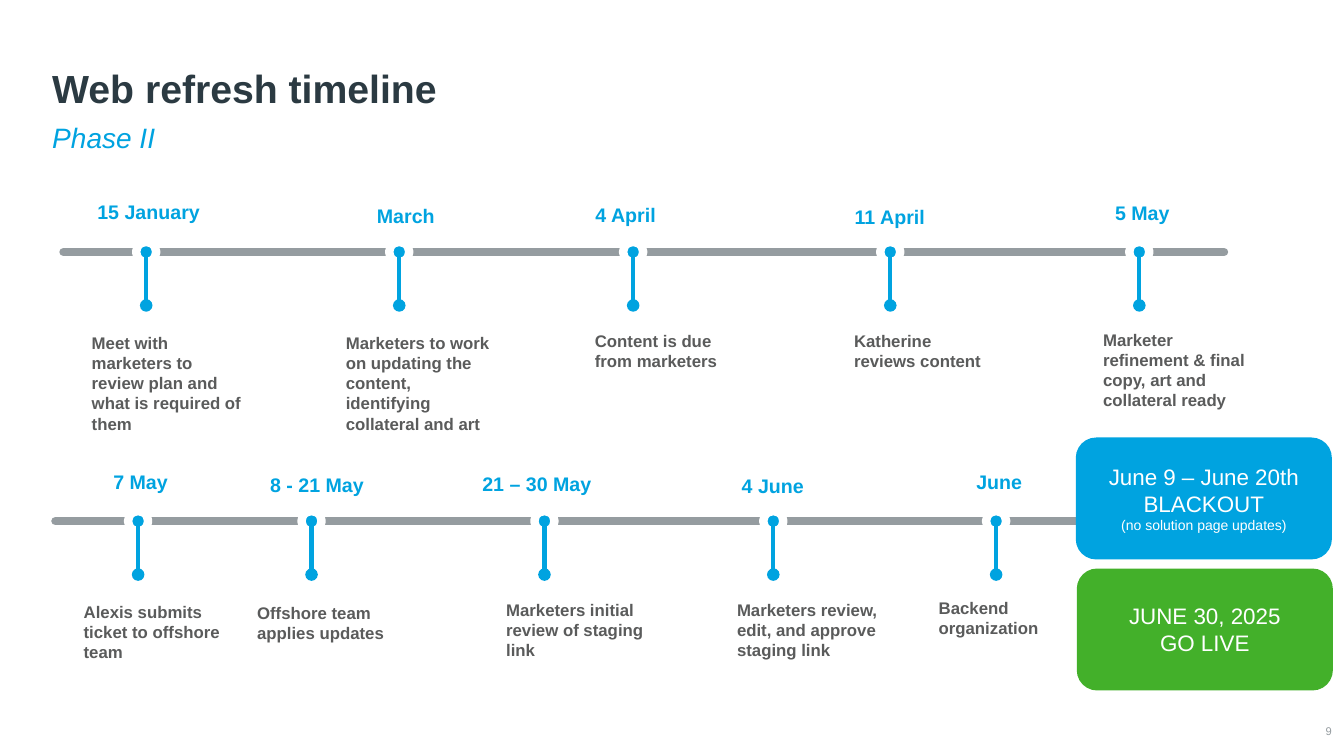
from lxml import etree
from pptx import Presentation
from pptx.dml.color import RGBColor
from pptx.enum.shapes import MSO_CONNECTOR, MSO_SHAPE
from pptx.enum.text import MSO_ANCHOR, PP_ALIGN
from pptx.oxml.ns import qn
from pptx.util import Inches, Pt

STRAIGHT = MSO_CONNECTOR.STRAIGHT
OVAL, ROUNDED = MSO_SHAPE.OVAL, MSO_SHAPE.ROUNDED_RECTANGLE
TOP, MIDDLE, BOTTOM = MSO_ANCHOR.TOP, MSO_ANCHOR.MIDDLE, MSO_ANCHOR.BOTTOM
LEFT, CENTER, RIGHT = PP_ALIGN.LEFT, PP_ALIGN.CENTER, PP_ALIGN.RIGHT

COLORS = {
    "blue": "00A3E0",
    "green": "43B02A",
    "navy": "2B3A42",
    "gray": "959CA0",
    "text": "5A5B5B",
    "white": "FFFFFF",
}
FONT = "Arial"
TITLE = "Web refresh timeline"
SUBTITLE = "Phase II"
PAGE_NUMBER = "9"

# Each milestone: date, (left, top, width), stem x, note, (left, top, width)
TIMELINES = [
    {
        "y": 2.5, "start": 0.63, "end": 12.14,
        "milestones": [
            ("15 January", (0.61, 1.93, 1.73), 1.45,
             "Meet with marketers to review plan and what is required of them", (0.91, 3.3, 1.52)),
            ("March", (2.79, 1.97, 2.47), 3.96,
             "Marketers to work on updating the content, identifying collateral and art", (3.43, 3.3, 1.52)),
            ("4 April", (5.26, 1.96, 1.89), 6.28,
             "Content is due from marketers", (5.9, 3.28, 1.51)),
            ("11 April", (7.88, 1.98, 1.89), 8.83,
             "Katherine reviews content", (8.47, 3.28, 1.42)),
            ("5 May", (10.04, 1.94, 2.58), 11.3,
             "Marketer refinement & final copy, art and collateral ready", (10.94, 3.27, 1.48)),
        ],
    },
    {
        "y": 5.17, "start": 0.55, "end": 12.05,
        "milestones": [
            ("7 May", (0.53, 4.61, 1.73), 1.37,
             "Alexis submits ticket to offshore team", (0.83, 5.97, 1.52)),
            ("8 - 21 May", (1.91, 4.64, 2.47), 3.09,
             "Offshore team applies updates", (2.55, 5.98, 1.52)),
            ("21 – 30 May", (4.38, 4.63, 1.89), 5.4,
             "Marketers initial review of staging link", (5.02, 5.95, 1.51)),
            ("4 June", (6.72, 4.65, 1.89), 7.67,
             "Marketers review, edit, and approve staging link", (7.31, 5.95, 1.42)),
            ("June", (8.62, 4.61, 2.58), 9.88,
             "Backend organization", (9.31, 5.93, 1.42)),
        ],
    },
]
CARDS = [
    (10.67, 4.34, "blue", [("June 9 – June 20th BLACKOUT", 16), ("(no solution page updates)", 10)]),
    (10.68, 5.64, "green", [("JUNE 30, 2025", 16), ("GO LIVE", 16)]),
]
CARD_W, CARD_H = 2.54, 1.21
DOT, STEM = 0.2, 0.53
DATE_H, NOTE_H = 0.34, 0.85


def rgb(name):
    return RGBColor.from_string(COLORS[name])


def style(p, size, color, align=LEFT, bold=False, italic=False):
    p.alignment = align
    p.font.name = FONT
    p.font.size = Pt(size)
    p.font.bold = bold
    p.font.italic = italic
    p.font.color.rgb = rgb(color)


def add_text(text, box, size, color, anchor=TOP, inset=True, spacing=None, **look):
    tf = slide.shapes.add_textbox(*map(Inches, box)).text_frame
    tf.word_wrap = True
    tf.vertical_anchor = anchor
    if not inset:
        tf.margin_left = tf.margin_right = tf.margin_top = tf.margin_bottom = 0
    p = tf.paragraphs[0]
    p.text = text
    style(p, size, color, **look)
    if spacing:
        p.line_spacing = spacing


def add_line(x1, y1, x2, y2, color, width, cap=None, head=None):
    line = slide.shapes.add_connector(STRAIGHT, *map(Inches, (x1, y1, x2, y2)))
    line.line.color.rgb = rgb(color)
    line.line.width = Pt(width)
    sp_pr = line._element.spPr
    ln = sp_pr.find(qn("a:ln"))
    if cap:
        ln.set("cap", cap)
    if head:
        etree.SubElement(ln, qn("a:headEnd")).set("type", head)
    etree.SubElement(sp_pr, qn("a:effectLst"))


def add_shape(kind, box, fill):
    sp = slide.shapes.add_shape(kind, *map(Inches, box))
    sp.shadow.inherit = False
    sp.fill.solid()
    sp.fill.fore_color.rgb = rgb(fill)
    return sp


def add_milestone(y, date, date_box, x, note, note_box):
    add_text(date, (*date_box, DATE_H), 14, "blue", align=CENTER, bold=True)
    dot = add_shape(OVAL, (x - DOT / 2, y - DOT / 2, DOT, DOT), "blue")
    dot.line.color.rgb = rgb("white")
    dot.line.width = Pt(6)
    add_line(x, y + STEM, x, y, "blue", 3, head="oval")
    add_text(note, (*note_box, NOTE_H), 12, "text", inset=False, bold=True)


def add_card(left, top, fill, lines):
    card = add_shape(ROUNDED, (left, top, CARD_W, CARD_H), fill)
    card.line.fill.background()
    tf = card.text_frame
    tf.word_wrap = True
    tf.vertical_anchor = MIDDLE
    for i, (text, size) in enumerate(lines):
        p = tf.add_paragraph() if i else tf.paragraphs[0]
        p.text = text
        style(p, size, "white", CENTER)


prs = Presentation()
prs.slide_width, prs.slide_height = Inches(13.33), Inches(7.5)
slide = prs.slides.add_slide(prs.slide_layouts[6])

add_text(PAGE_NUMBER, (12.82, 7.16, 0.39, 0.19), 8, "gray", MIDDLE, inset=False, align=RIGHT)
add_text(SUBTITLE, (0.42, 1.18, 12.4, 0.44), 20, "blue", spacing=0.9, italic=True)
add_text(TITLE, (0.42, 0.32, 12.4, 0.84), 28, "navy", BOTTOM, spacing=0.9, bold=True)

for timeline in TIMELINES:
    y = timeline["y"]
    add_line(timeline["start"], y, timeline["end"], y, "gray", 6, cap="rnd")
    for milestone in timeline["milestones"]:
        add_milestone(y, *milestone)

for card in CARDS:
    add_card(*card)

prs.save("out.pptx")
